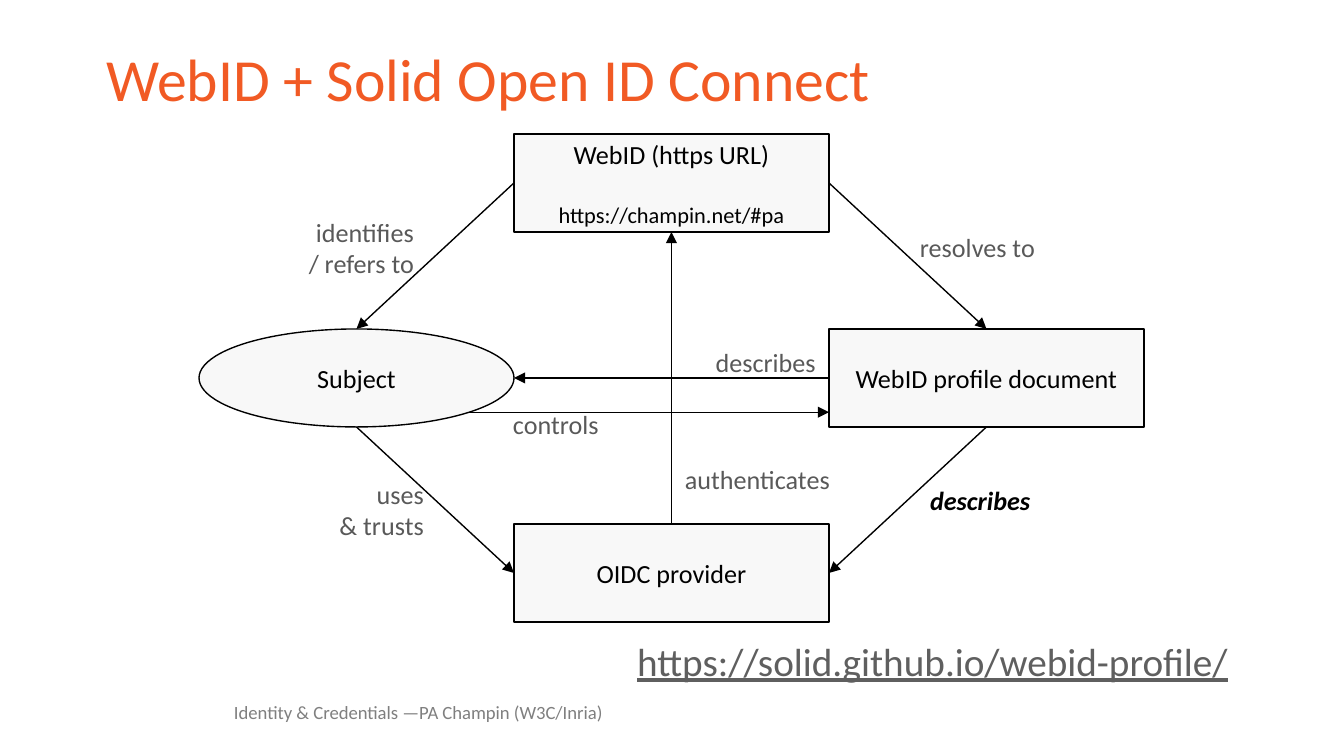
from lxml.etree import SubElement
from pptx import Presentation
from pptx.dml.color import RGBColor
from pptx.enum.shapes import MSO_CONNECTOR as Connector, MSO_SHAPE as Shape
from pptx.enum.text import MSO_ANCHOR as Anchor, MSO_AUTO_SIZE as AutoSize, PP_ALIGN as Align
from pptx.oxml.ns import qn
from pptx.util import Pt

PX = 914400 / 134.4
SLIDE = (1344, 756)
THEME = {
    "font": "Calibri",
    "line": 0.75,
    "colors": {"accent": "F15A24", "ink": "000000", "node": "F8F8F8",
               "label": "595959", "link": "5F5F5F", "footer": "7F7F7F"},
    "sizes": {"title": 32, "link": 21, "node": 14, "detail": 12, "label": 14, "footer": 10},
}

TITLE = "WebID + Solid Open ID Connect"
FOOTER = "Identity & Credentials —PA Champin (W3C/Inria)"
LINK = "https://solid.github.io/webid-profile/"

NODE_SIZE = (315, 98)
GRID_START = (199, 134)
GRID_STEP = (315, 195)
NODES = {
    "webid": (1, 0, Shape.RECTANGLE, ["WebID (https URL)", "https://champin.net/#pa"]),
    "profile": (2, 1, Shape.RECTANGLE, ["WebID profile document"]),
    "subject": (0, 1, Shape.OVAL, ["Subject"]),
    "provider": (1, 2, Shape.RECTANGLE, ["OIDC provider"]),
}

TOP, LEFT, BOTTOM, RIGHT = (0.5, 0), (0, 0.5), (0.5, 1), (1, 0.5)
LOWER_RIGHT, LOWER_LEFT = (0.85, 0.85), (0, 0.85)
RELATIONS = [
    ("webid", LEFT, "subject", TOP),
    ("webid", RIGHT, "profile", TOP),
    ("profile", BOTTOM, "provider", RIGHT),
    ("subject", BOTTOM, "provider", LEFT),
    ("provider", TOP, "webid", BOTTOM),
    ("profile", LEFT, "subject", RIGHT),
    ("subject", LOWER_RIGHT, "profile", LOWER_LEFT),
]

PLAIN = {"color": "label"}
STRONG = {"color": "ink", "bold": True, "italic": True}
LABEL_HEIGHT = 59
LABELS = [
    (["describes"], 917, 471, 141, Align.LEFT, STRONG),
    (["resolves to"], 907, 218, 160, Align.LEFT, PLAIN),
    (["uses", "& trusts"], 277, 480, 160, Align.RIGHT, PLAIN),
    (["authenticates"], 672, 450, 191, Align.LEFT, PLAIN),
    (["describes"], 688, 333, 141, Align.RIGHT, PLAIN),
    (["controls"], 500, 395, 141, Align.LEFT, PLAIN),
    (["identifies", "/ refers to"], 286, 218, 141, Align.RIGHT, PLAIN),
]


def emu(*lengths):
    return [round(length * PX) for length in lengths]


def color(name):
    return RGBColor.from_string(THEME["colors"][name])


def assign(target, values):
    for name, value in values.items():
        setattr(target, name, value)


def write(frame, lines, role, ink, align, insets, anchor=Anchor.MIDDLE, spacing=1.0, **style):
    sides = ("margin_left", "margin_top", "margin_right", "margin_bottom")
    assign(frame, dict(zip(sides, emu(*insets))))
    assign(frame, {"word_wrap": True, "auto_size": AutoSize.NONE, "vertical_anchor": anchor})
    frame.text = "\n".join(lines)
    for paragraph in frame.paragraphs:
        assign(paragraph, {"alignment": align, "line_spacing": spacing, "space_before": Pt(0)})
        for run in paragraph.runs:
            assign(run.font, {"name": THEME["font"], "size": Pt(THEME["sizes"][role]), **style})
            run.font.color.rgb = color(ink)


def fill_placeholder(placeholder, box, *content, **style):
    assign(placeholder, dict(zip(("left", "top", "width", "height"), emu(*box))))
    write(placeholder.text_frame, *content, **style)
    for paragraph in placeholder.text_frame.paragraphs:
        properties = paragraph._p.get_or_add_pPr()
        assign_indent = {"marL": "0", "indent": "0"}
        for name, value in assign_indent.items():
            properties.set(name, value)
        SubElement(properties, qn("a:buNone"))


def add_node(slide, column, row, outline, lines):
    x, y = (start + step * cell
            for start, step, cell in zip(GRID_START, GRID_STEP, (column, row)))
    node = slide.shapes.add_shape(outline, *emu(x, y, *NODE_SIZE))
    node.shadow.inherit = False
    node.fill.solid()
    node.fill.fore_color.rgb = color("node")
    node.line.color.rgb = color("ink")
    node.line.width = Pt(THEME["line"])
    write(node.text_frame, lines, "node", "ink", Align.CENTER, (13, 13, 13, 13))
    for detail in node.text_frame.paragraphs[1:]:
        detail.space_before = Pt(17)
        detail.runs[0].font.size = Pt(THEME["sizes"]["detail"])
    return node


def site(node, fractions):
    across, down = fractions
    return round(node.left + node.width * across), round(node.top + node.height * down)


def add_arrow(slide, start, end):
    arrow = slide.shapes.add_connector(Connector.STRAIGHT, *start, *end)
    arrow.line.color.rgb = color("ink")
    arrow.line.width = Pt(THEME["line"])
    SubElement(arrow.line._get_or_add_ln(), qn("a:tailEnd"), type="triangle")
    SubElement(arrow._element.spPr, qn("a:effectLst"))


def main():
    deck = Presentation()
    deck.slide_width, deck.slide_height = emu(*SLIDE)
    slide = deck.slides.add_slide(deck.slide_layouts[3])
    title, footer, link = slide.placeholders

    fill_placeholder(title, (93, 40, 1158, 85), [TITLE], "title", "accent",
                     Align.LEFT, (13, 7, 13, 7), spacing=0.9)
    fill_placeholder(footer, (234, 700, 407, 24), [FOOTER], "footer", "footer",
                     Align.LEFT, (0, 0, 0, 0), anchor=Anchor.BOTTOM, spacing=0.9)
    fill_placeholder(link, (93, 626, 1158, 65), [LINK], "link", "link",
                     Align.RIGHT, (13, 7, 23, 7), anchor=Anchor.BOTTOM, spacing=0.8,
                     underline=True)

    nodes = {name: add_node(slide, *node) for name, node in NODES.items()}
    for source, source_site, target, target_site in RELATIONS:
        add_arrow(slide, site(nodes[source], source_site), site(nodes[target], target_site))

    for lines, x, y, width, align, style in LABELS:
        label = slide.shapes.add_textbox(*emu(x, y, width, LABEL_HEIGHT))
        font_style = {name: value for name, value in style.items() if name != "color"}
        write(label.text_frame, lines, "label", style["color"], align,
              (13, 13, 13, 13), **font_style)

    deck.save("out.pptx")


if __name__ == "__main__":
    main()
